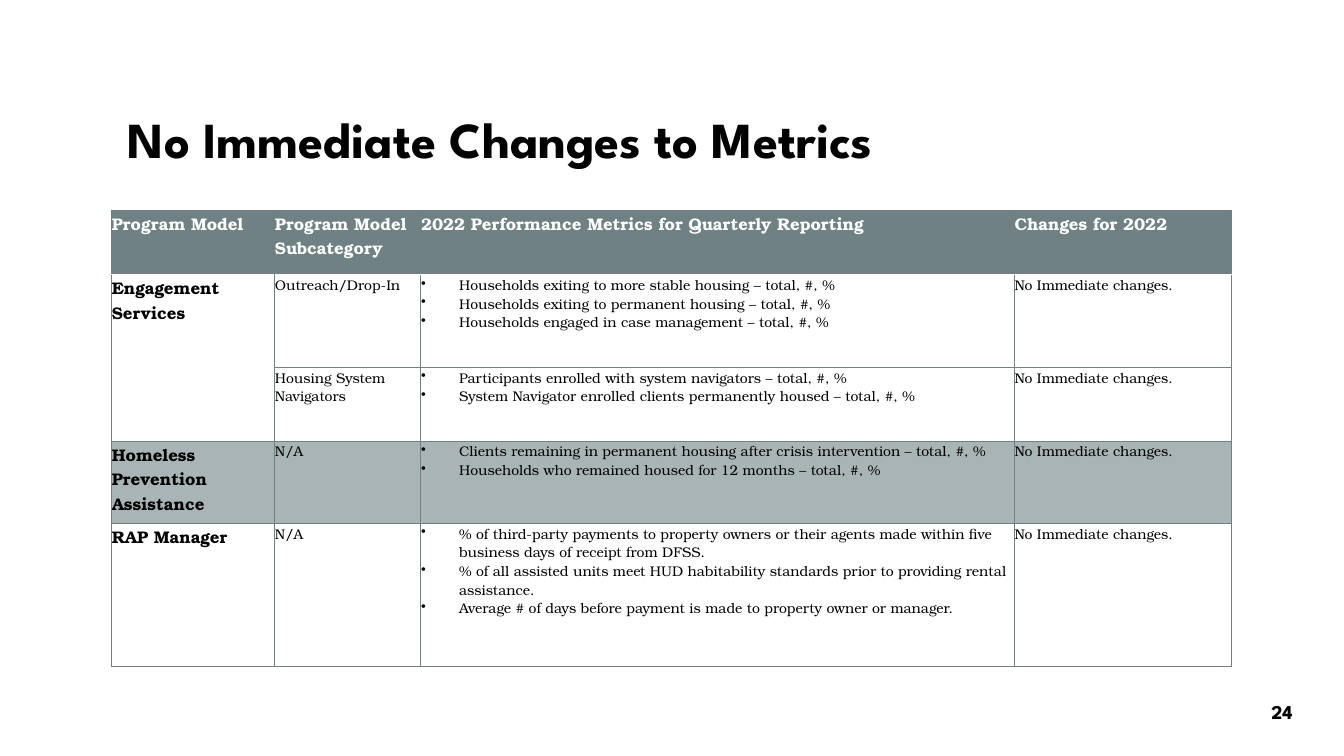
from lxml import etree
from pptx import Presentation
from pptx.dml.color import RGBColor
from pptx.enum import text
from pptx.oxml.ns import qn
from pptx.util import Cm, Pt

BLACK = RGBColor(0x00, 0x00, 0x00)
WHITE = RGBColor(0xFF, 0xFF, 0xFF)
SLATE = RGBColor(0x6F, 0x81, 0x83)
MIST = RGBColor(0xA8, 0xB4, 0xB5)

HEADING = {"name": "League Spartan", "bold": True}
HEADER = {"name": "TeX Gyre Bonum", "size": Pt(12), "bold": True}
BODY = {"name": "TeX Gyre Bonum", "size": Pt(10), "bold": False}

COL_WIDTHS = [4.11, 3.68, 14.96, 5.49]
ROW_HEIGHTS = [1.63, 2.34, 1.85, 2.08, 3.61]
HEADERS = ["Program Model", "Program Model Subcategory",
           "2022 Performance Metrics for Quarterly Reporting", "Changes for 2022"]
NO_CHANGE = "No Immediate changes."
# Program model, subcategory, metrics, row fill
PROGRAMS = [
    ("Engagement Services", "Outreach/Drop-In", [
        "Households exiting to more stable housing – total, #, %",
        "Households exiting to permanent housing – total, #, %",
        "Households engaged in case management – total, #, %"], WHITE),
    ("", "Housing System Navigators", [
        "Participants enrolled with system navigators – total, #, %",
        "System Navigator enrolled clients permanently housed – total, #, %"], WHITE),
    ("Homeless Prevention Assistance", "N/A", [
        "Clients remaining in permanent housing after crisis intervention – total, #, %",
        "Households who remained housed for 12 months – total, #, %"], MIST),
    ("RAP Manager", "N/A", [
        "% of third-party payments to property owners or their agents made within five "
        "business days of receipt from DFSS.",
        "% of all assisted units meet HUD habitability standards prior to providing "
        "rental assistance.",
        "Average # of days before payment is made to property owner or manager."], WHITE),
]


def add_run(p, content, color, fmt):
    r = p.add_run()
    r.text = content
    for name, value in fmt.items():
        setattr(r.font, name, value)
    r.font.color.rgb = color


def add_label(s, box, content, fmt, align):
    tf = s.shapes.add_textbox(*(Cm(v) for v in box)).text_frame
    tf.word_wrap = True
    tf.vertical_anchor = text.MSO_ANCHOR.MIDDLE
    p = tf.paragraphs[0]
    p.alignment = align
    add_run(p, content, BLACK, fmt)
    return p


def add_bullet(p):
    """Give the paragraph a hanging bullet."""
    pPr = p._p.get_or_add_pPr()
    pPr.set("marL", str(Cm(0.96)))
    pPr.set("indent", str(-Cm(0.96)))
    etree.SubElement(pPr, qn("a:buChar"), char="•")


def set_borders(cell, **edges):
    """Draw the four cell edges; edges maps L, R, T or B to (colour, points)."""
    tcPr = cell._tc.get_or_add_tcPr()
    for side in "LRTB":
        color, width = edges.get(side, (SLATE, 0.5))
        ln = etree.SubElement(tcPr, qn(f"a:ln{side}"), w=str(Pt(width)))
        fill = etree.SubElement(ln, qn("a:solidFill"))
        etree.SubElement(fill, qn("a:srgbClr"), val=str(color))


def fill_cell(cell, lines, fill, color, fmt, bullets=False, **edges):
    set_borders(cell, **edges)
    cell.fill.solid()
    cell.fill.fore_color.rgb = fill
    for side in ("left", "right", "top", "bottom"):
        setattr(cell, f"margin_{side}", Cm(0.02))
    tf = cell.text_frame
    for i, line in enumerate(lines):
        p = tf.add_paragraph() if i else tf.paragraphs[0]
        if bullets:
            add_bullet(p)
        add_run(p, line, color, fmt)


def add_metrics_table(s):
    frame = s.shapes.add_table(len(ROW_HEIGHTS), len(COL_WIDTHS), Cm(2.8), Cm(5.29),
                               Cm(sum(COL_WIDTHS)), Cm(sum(ROW_HEIGHTS)))
    table = frame.table
    table.first_row = table.horz_banding = False
    for col, width in zip(table.columns, COL_WIDTHS):
        col.width = Cm(width)
    for row, height in zip(table.rows, ROW_HEIGHTS):
        row.height = Cm(height)
    table.cell(1, 0).merge(table.cell(2, 0))

    rule = (WHITE, 1)
    for c, header in enumerate(HEADERS):
        fill_cell(table.cell(0, c), [header], SLATE, WHITE, HEADER, B=rule)
    for r, (model, subcategory, metrics, fill) in enumerate(PROGRAMS, 1):
        edges = {"T": rule} if r == 1 else {}
        model_lines = [model] if model else []
        fill_cell(table.cell(r, 0), model_lines, fill, BLACK, HEADER, R=(SLATE, 1))
        fill_cell(table.cell(r, 1), [subcategory], fill, BLACK, BODY, **edges)
        fill_cell(table.cell(r, 2), metrics, fill, BLACK, BODY, bullets=True, **edges)
        fill_cell(table.cell(r, 3), [NO_CHANGE], fill, BLACK, BODY, **edges)


def main():
    prs = Presentation()
    prs.slide_width, prs.slide_height = Cm(33.87), Cm(19.05)
    s = prs.slides.add_slide(prs.slide_layouts[6])
    title = add_label(s, (2.97, 1.35, 27.94, 4.47), "No Immediate Changes to Metrics",
                      {**HEADING, "size": Pt(36)}, text.PP_ALIGN.LEFT)
    title.line_spacing = 0.9
    add_metrics_table(s)
    add_label(s, (31.42, 17.42, 1.78, 1.02), "24",
              {**HEADING, "size": Pt(14)}, text.PP_ALIGN.CENTER)
    prs.save("out.pptx")


if __name__ == "__main__":
    main()
